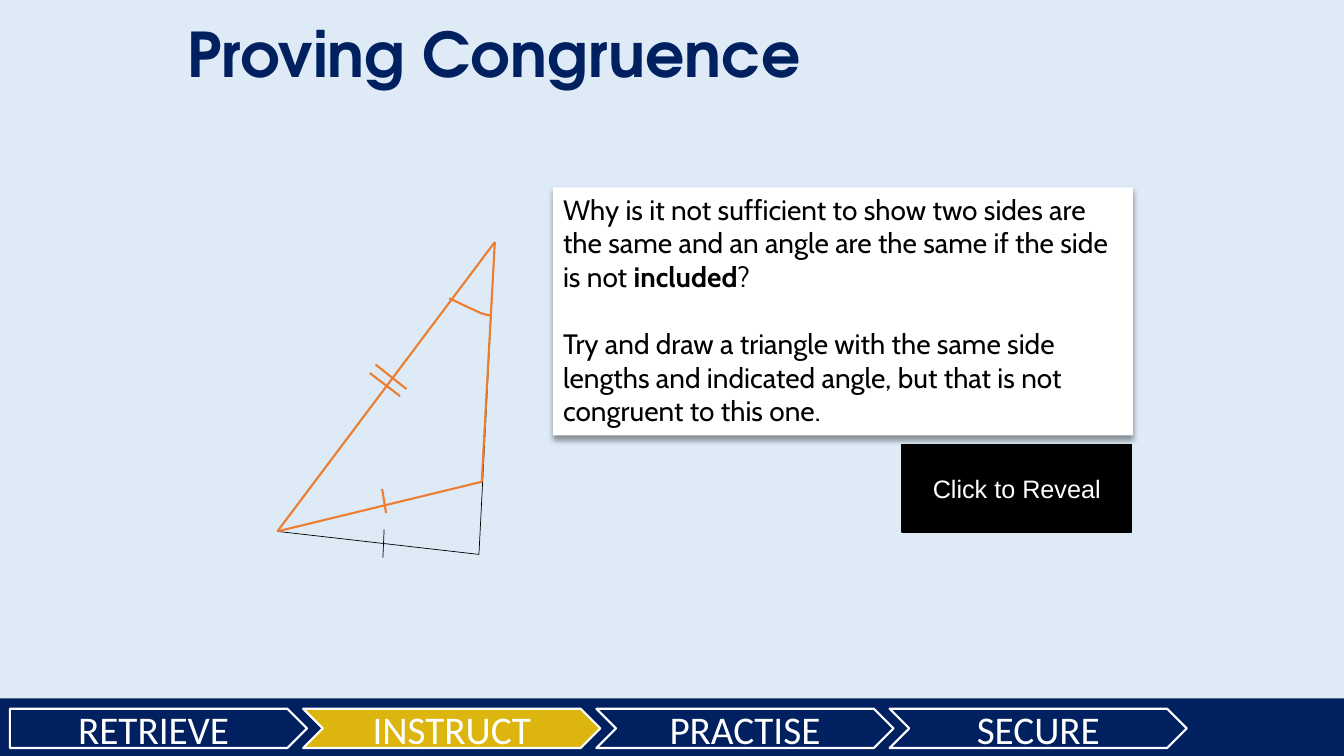
"""Build a maths lesson slide on proving congruence."""
from lxml import etree
from pptx import Presentation, util as u
from pptx.dml.color import RGBColor
from pptx.enum import shapes, text
from pptx.oxml import ns

COLOURS = {"sky": "DEEBF7", "navy": "002060", "gold": "DCB50E",
           "white": "FFFFFF", "black": "000000", "orange": "ED7D31"}
STAGES = ["RETRIEVE", "INSTRUCT", "PRACTISE", "SECURE"]
CURRENT_STAGE = "INSTRUCT"
QUESTION = [
    [("Why is it not sufficient to show two sides are the same and an angle "
      "are the same if the side is not ", False), ("included", True), ("?", False)],
    [("Try and draw a triangle with the same side lengths and indicated "
      "angle, but that is not congruent to this one.", False)],
]
APEX, LEFT = (12.47, 6.1), (6.99, 13.39)
ANGLE_ARC = [(11.33, 7.52), (11.79, 7.74), (12.14, 7.9), (12.34, 7.95)]
DOUBLE_TICK = [((9.47, 9.19), (10.24, 9.8)), ((9.32, 9.4), (10.08, 9.98))]


class LessonPage:
    """Holds the style and the slide being drawn."""

    def __init__(self, deck):
        self.page = deck.slides.add_slide(deck.slide_layouts[5])
        fill = self.page.background.fill
        fill.solid()
        fill.fore_color.rgb = self.colour("sky")

    def colour(self, name):
        """Return the named colour."""
        return RGBColor.from_string(COLOURS[name])

    def font(self, para, name, size, colour):
        """Set the font of a paragraph."""
        para.font.name, para.font.size = name, u.Pt(size)
        para.font.color.rgb = self.colour(colour)

    def stroke(self, line, colour, width):
        """Set the colour and width of a line."""
        line.color.rgb = self.colour(colour)
        line.width = u.Pt(width)

    def title(self, words, place):
        """Fill and move the title placeholder."""
        box = self.page.shapes.title
        box.left, box.top, box.width, box.height = map(u.Cm, place)
        frame = box.text_frame
        frame.text = words
        frame.auto_size = text.MSO_AUTO_SIZE.NONE
        frame.vertical_anchor = text.MSO_ANCHOR.TOP
        para = frame.paragraphs[0]
        para.alignment = text.PP_ALIGN.LEFT
        self.font(para, "TeX Gyre Adventor", 44, "navy")
        para.font.bold = True

    def block(self, place, fill, kind=shapes.MSO_SHAPE.RECTANGLE, outline=None, width=1):
        """Add a filled shape, outlined if a colour is given."""
        box = self.page.shapes.add_shape(kind, *map(u.Cm, place))
        box.shadow.inherit = False
        box.fill.solid()
        box.fill.fore_color.rgb = self.colour(fill)
        if outline:
            self.stroke(box.line, outline, width)
        else:
            box.line.fill.background()
        return box

    def label(self, box, words, name, size):
        """Put one centred white line of text in a shape."""
        box.text_frame.vertical_anchor = text.MSO_ANCHOR.MIDDLE
        para = box.text_frame.paragraphs[0]
        para.text = words
        para.alignment = text.PP_ALIGN.CENTER
        self.font(para, name, size, "white")

    def question(self, paragraphs, place):
        """Add a white card with a soft shadow and the question."""
        box = self.block(place, "white")
        effects = box._element.spPr.find(ns.qn("a:effectLst"))
        shadow = etree.SubElement(effects, ns.qn("a:outerShdw"), blurRad=str(u.Pt(4)),
                                  dist=str(u.Pt(3)), dir="5400000", algn="t", rotWithShape="0")
        tint = etree.SubElement(shadow, ns.qn("a:srgbClr"), val=COLOURS["black"])
        etree.SubElement(tint, ns.qn("a:alpha"), val="40000")
        frame = box.text_frame
        frame.word_wrap = True
        frame.auto_size = text.MSO_AUTO_SIZE.SHAPE_TO_FIT_TEXT
        frame.vertical_anchor = text.MSO_ANCHOR.TOP
        for index, spans in enumerate(paragraphs):
            para = frame.add_paragraph() if index else frame.paragraphs[0]
            para.alignment = text.PP_ALIGN.LEFT
            if index:
                para.space_before = u.Pt(24)
            for words, bold in spans:
                span = para.add_run()
                span.text = words
                if bold:
                    span.font.bold = True
            self.font(para, "Cabin", 20, "black")

    def triangle(self, corner, tick, colour, width):
        """Add a group with a triangle, its angle arc and its side ticks."""
        group = self.page.shapes.add_group_shape().shapes
        sides = [(APEX, corner), (LEFT, corner), (LEFT, APEX)]
        for start, end in sides + [tick] + DOUBLE_TICK:
            line = group.add_connector(shapes.MSO_CONNECTOR.STRAIGHT, *map(u.Cm, start + end))
            etree.SubElement(line._element.spPr, ns.qn("a:effectLst"))
            self.stroke(line.line, colour, width)
        points = [(u.Cm(x), u.Cm(y)) for x, y in ANGLE_ARC]
        builder = group.build_freeform(*points[0])
        builder.add_line_segments(points[1:], close=False)
        arc = builder.convert_to_shape()
        arc.shadow.inherit = False
        arc.fill.background()
        self.stroke(arc.line, colour, width)

    def stages(self):
        """Add the footer bar with the lesson stages."""
        self.block((0, 17.6, 33.87, 1.45), "navy")
        for index, stage in enumerate(STAGES):
            kind = shapes.MSO_SHAPE.CHEVRON if index else shapes.MSO_SHAPE.PENTAGON
            fill = "gold" if stage == CURRENT_STAGE else "navy"
            box = self.block((0.25 + 7.39 * index, 17.86, 7.49, 0.99), fill, kind, "white", 1.5)
            self.label(box, stage, "Calibri", 28)


def main():
    """Draw the slide and save it."""
    deck = Presentation()
    deck.slide_width, deck.slide_height = u.Cm(33.87), u.Cm(19.05)
    lesson = LessonPage(deck)
    lesson.title("Proving Congruence", (4.47, 0.28, 22.86, 3.18))
    lesson.stages()
    lesson.triangle((12.07, 13.97), ((9.68, 13.34), (9.65, 14.05)), "black", 0.5)
    lesson.question(QUESTION, (13.94, 4.72, 14.61, 6.25))
    lesson.triangle((12.14, 12.14), ((9.63, 12.32), (9.73, 12.93)), "orange", 1.5)
    button = lesson.block((22.73, 11.2, 5.79, 2.21), "black", outline="black")
    lesson.label(button, "Click to Reveal", "Arial", 18)
    deck.save("out.pptx")


if __name__ == "__main__":
    main()
